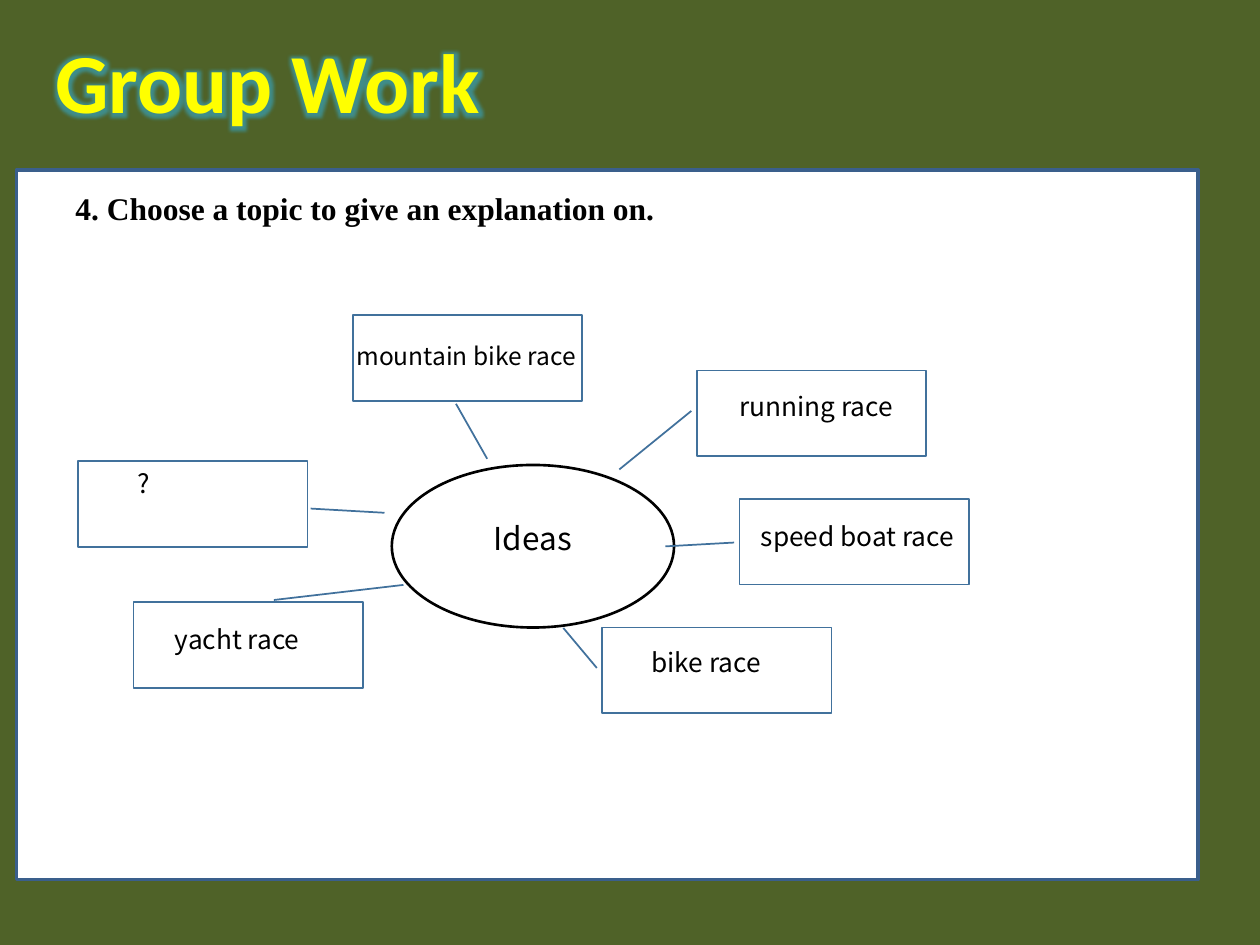
from lxml import etree
from pptx import Presentation
from pptx import util as u
from pptx.dml.color import RGBColor
from pptx.enum import shapes, text
from pptx.oxml import ns

GREEN = RGBColor(0x4F, 0x62, 0x28)
YELLOW = RGBColor(0xFF, 0xFF, 0x00)
WHITE = RGBColor(0xFF, 0xFF, 0xFF)
BLACK = RGBColor(0x00, 0x00, 0x00)
PANEL_EDGE = RGBColor(0x3A, 0x5F, 0x8C)
CALLOUT_EDGE = RGBColor(0x41, 0x71, 0x9C)
TITLE_EDGE = RGBColor(0x46, 0x7A, 0xB8)
GLOW = RGBColor(0x35, 0xAA, 0xCC)

COLUMNS, ROWS = 100, 75
CALLOUT_SIZE = (18.2, 6.8)

IDEAS = [
    ("running race", 15, (55.3, 29.4), (0.473, -0.024, 1.156, -0.338), (57.7, 30.5, 17.9, 4.4), 1),
    ("speed boat race", 15, (58.7, 39.6), (0.509, -0.024, 0.554, -0.324), (59.4, 40.8, 21.3, 8.1), 1),
    ("bike race", 15, (47.8, 49.8), (0.473, -0.024, 0.006, -0.17), (50.7, 50.8, 17.9, 4.4), 1),
    ("yacht race", 15, (10.6, 47.8), (-0.027, 0.612, -0.203, 1.177), (12.9, 49, 13.6, 4.4), 1),
    ("?", 15, (6.2, 36.6), (0.603, 1.336, 0.554, 1.014), (6.2, 36.6, 18.7, 8.1), 4.7),
    ("mountain bike race", 14, (28, 25), (1.037, 0.45, 1.679, 0.586), (27.3, 26.6, 24, 8.1), 1),
]


def write(frame, words, size, font, color=BLACK, bold=False, align=text.PP_ALIGN.LEFT, space=0):
    para = frame.paragraphs[0]
    para.alignment = align
    para.space_before = para.space_after = u.Pt(space)
    span = para.add_run()
    span.text = words
    span.font.size = u.Pt(size)
    span.font.name = font
    span.font.bold = bold
    span.font.color.rgb = color
    return span


class Board:
    heading_font = "Calibri"
    task_font = "Times New Roman"
    idea_font = "Noto Sans CJK SC"

    def __init__(self, deck):
        self.column = deck.slide_width / COLUMNS
        self.row = deck.slide_height / ROWS
        self.page = deck.slides.add_slide(deck.slide_layouts[5])
        self.page.background.fill.solid()
        self.page.background.fill.fore_color.rgb = GREEN

    def area(self, left, top, width, height):
        return (round(left * self.column), round(top * self.row),
                round(width * self.column), round(height * self.row))

    def title(self, words, place):
        box = self.page.shapes.title
        box.left, box.top, box.width, box.height = self.area(*place)
        span = write(box.text_frame, words, 48, self.heading_font, YELLOW, True, text.PP_ALIGN.CENTER)
        fill = span.font.fill._xPr.find(ns.qn("a:solidFill"))
        drawing = ns.nsdecls("a")
        fill.addprevious(etree.fromstring(
            f'<a:ln {drawing} w="{u.Pt(0.83)}"><a:solidFill>'
            f'<a:srgbClr val="{TITLE_EDGE}"/></a:solidFill></a:ln>'))
        fill.addnext(etree.fromstring(
            f'<a:effectLst {drawing}><a:glow rad="{u.Pt(8)}"><a:srgbClr val="{GLOW}">'
            '<a:alpha val="60000"/></a:srgbClr></a:glow></a:effectLst>'))

    def shape(self, kind, place, edge, weight, fill=None, pointer=()):
        box = self.page.shapes.add_shape(kind, *self.area(*place))
        box.shadow.inherit = False
        box.line.color.rgb = edge
        box.line.width = u.Pt(weight)
        if fill is None:
            box.fill.background()
        else:
            box.fill.solid()
            box.fill.fore_color.rgb = fill
        for index, share in enumerate(pointer):
            box.adjustments[index] = share

    def label(self, words, place, size, font, inset=1, wrap=True, **style):
        frame = self.page.shapes.add_textbox(*self.area(*place)).text_frame
        frame.word_wrap = wrap
        frame.margin_left = round(inset * self.column)
        write(frame, words, size, font, **style)

    def idea(self, words, size, corner, pointer, place, inset):
        self.shape(shapes.MSO_SHAPE.LINE_CALLOUT_1, corner + CALLOUT_SIZE, CALLOUT_EDGE, 1, pointer=pointer)
        self.label(words, place, size, self.idea_font, inset, space=5)


def main():
    deck = Presentation()
    deck.slide_width, deck.slide_height = u.Inches(10), u.Inches(7.5)
    board = Board(deck)
    board.title("Group Work", (0.2, 1.8, 42.1, 9.1))
    board.shape(shapes.MSO_SHAPE.RECTANGLE, (1.3, 13.5, 93.8, 56.3), PANEL_EDGE, 2, WHITE)
    board.label("4. Choose a topic to give an explanation on.", (5, 14.5, 48.4, 4),
                18, board.task_font, wrap=False, bold=True)
    board.shape(shapes.MSO_SHAPE.OVAL, (31.1, 36.9, 22.4, 12.9), BLACK, 1.5)
    board.label("Ideas", (38.2, 40.7, 14.4, 6.7), 18, board.idea_font, space=5)
    for idea in IDEAS:
        board.idea(*idea)
    deck.save("out.pptx")


if __name__ == "__main__":
    main()
